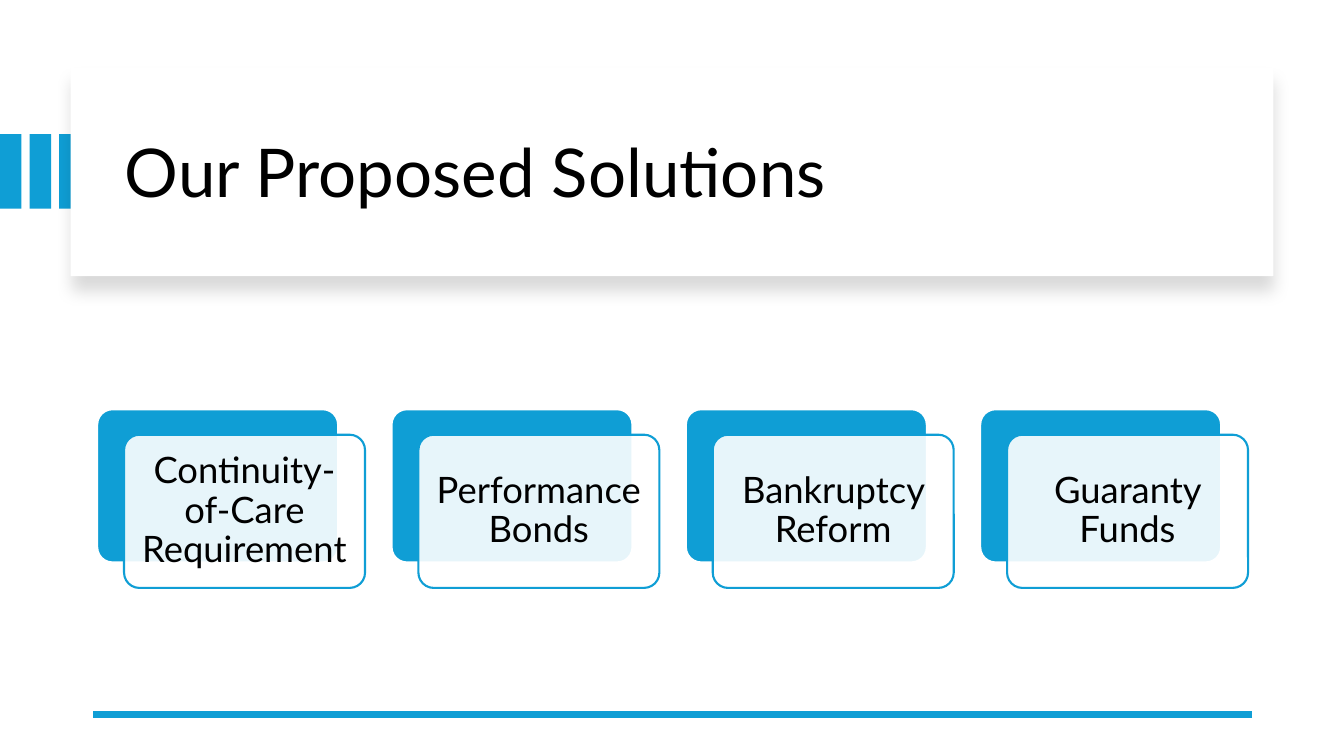
from lxml.etree import SubElement
from pptx import Presentation
from pptx.dml.color import RGBColor
from pptx.enum.shapes import MSO_CONNECTOR, MSO_SHAPE
from pptx.enum.text import MSO_ANCHOR, PP_ALIGN
from pptx.oxml.ns import qn
from pptx.util import Inches, Pt

BLUE = RGBColor(0x0F, 0x9E, 0xD5)
WHITE = RGBColor(0xFF, 0xFF, 0xFF)
BLACK = RGBColor(0x00, 0x00, 0x00)
CARDS = ["Continuity-of-Care Requirement", "Performance Bonds",
         "Bankruptcy Reform", "Guaranty Funds"]


def write(shape, text, size=26, align=PP_ALIGN.CENTER, inset=0.1):
    frame = shape.text_frame
    frame.word_wrap = True
    frame.vertical_anchor = MSO_ANCHOR.MIDDLE
    frame.margin_left = frame.margin_right = Inches(inset)
    frame.margin_top = frame.margin_bottom = Inches(inset)
    para = frame.paragraphs[0]
    para.text = text
    para.alignment = align
    para.line_spacing = 0.9
    para.font.name = "Lato"
    para.font.size = Pt(size)
    para.font.color.rgb = BLACK


class Page:
    def __init__(self, deck):
        self.wide, self.high = deck.slide_width, deck.slide_height
        self.shapes = deck.slides.add_slide(deck.slide_layouts[6]).shapes

    def place(self, x, y, w, h):
        return (int(self.wide * x / 100), int(self.high * y / 100),
                int(self.wide * w / 100), int(self.high * h / 100))

    def box(self, x, y, w, h, fill, line=None, round=False):
        kind = MSO_SHAPE.ROUNDED_RECTANGLE if round else MSO_SHAPE.RECTANGLE
        shape = self.shapes.add_shape(kind, *self.place(x, y, w, h))
        shape.shadow.inherit = False
        shape.fill.solid()
        shape.fill.fore_color.rgb = fill
        if round:
            shape.adjustments[0] = 0.1
        if line is None:
            shape.line.fill.background()
        else:
            shape.line.color.rgb = line
            shape.line.width = Pt(1.5)
        return shape

    def panel(self, x, y, w, h):
        shape = self.box(x, y, w, h, WHITE)
        effects = shape._element.spPr.find(qn("a:effectLst"))
        shade = SubElement(effects, qn("a:outerShdw"), blurRad=str(Pt(11)),
                           dist=str(Pt(10)), dir="5400000", rotWithShape="0")
        color = SubElement(shade, qn("a:srgbClr"), val=str(BLACK))
        SubElement(color, qn("a:alpha"), val="15000")

    def title(self, x, y, w, h, text):
        shape = self.shapes.add_textbox(*self.place(x, y, w, h))
        write(shape, text, size=48, align=PP_ALIGN.LEFT)

    def card(self, x, y, w, h, text):
        self.box(x, y, w, h, BLUE, line=WHITE, round=True)
        front = self.box(x + 2, y + 3.37, w, h, WHITE, line=BLUE, round=True)
        color = front._element.spPr.find(qn("a:solidFill"))[0]
        SubElement(color, qn("a:alpha"), val="90000")
        write(front, text)

    def rule(self, left, right, y):
        ends = self.place(right, y, left, y)
        line = self.shapes.add_connector(MSO_CONNECTOR.STRAIGHT, *ends)
        line.line.color.rgb = BLUE
        line.line.width = Pt(4.5)
        SubElement(line._element.spPr, qn("a:effectLst"))


def main():
    deck = Presentation()
    deck.slide_width, deck.slide_height = Inches(13.33), Inches(7.5)
    page = Page(deck)
    for i in range(3):
        page.box(2.2 * i, 17.75, 1.6, 9.87, BLUE)
    page.panel(5.25, 8.93, 89.5, 27.6)
    page.title(8.55, 11.87, 83.5, 22.67, "Our Proposed Solutions")
    page.rule(6.9, 93.17, 94.53)
    for i, text in enumerate(CARDS):
        page.card(7.23 + 21.9 * i, 54.13, 17.93, 20.27, text)
    deck.save("out.pptx")


if __name__ == "__main__":
    main()
